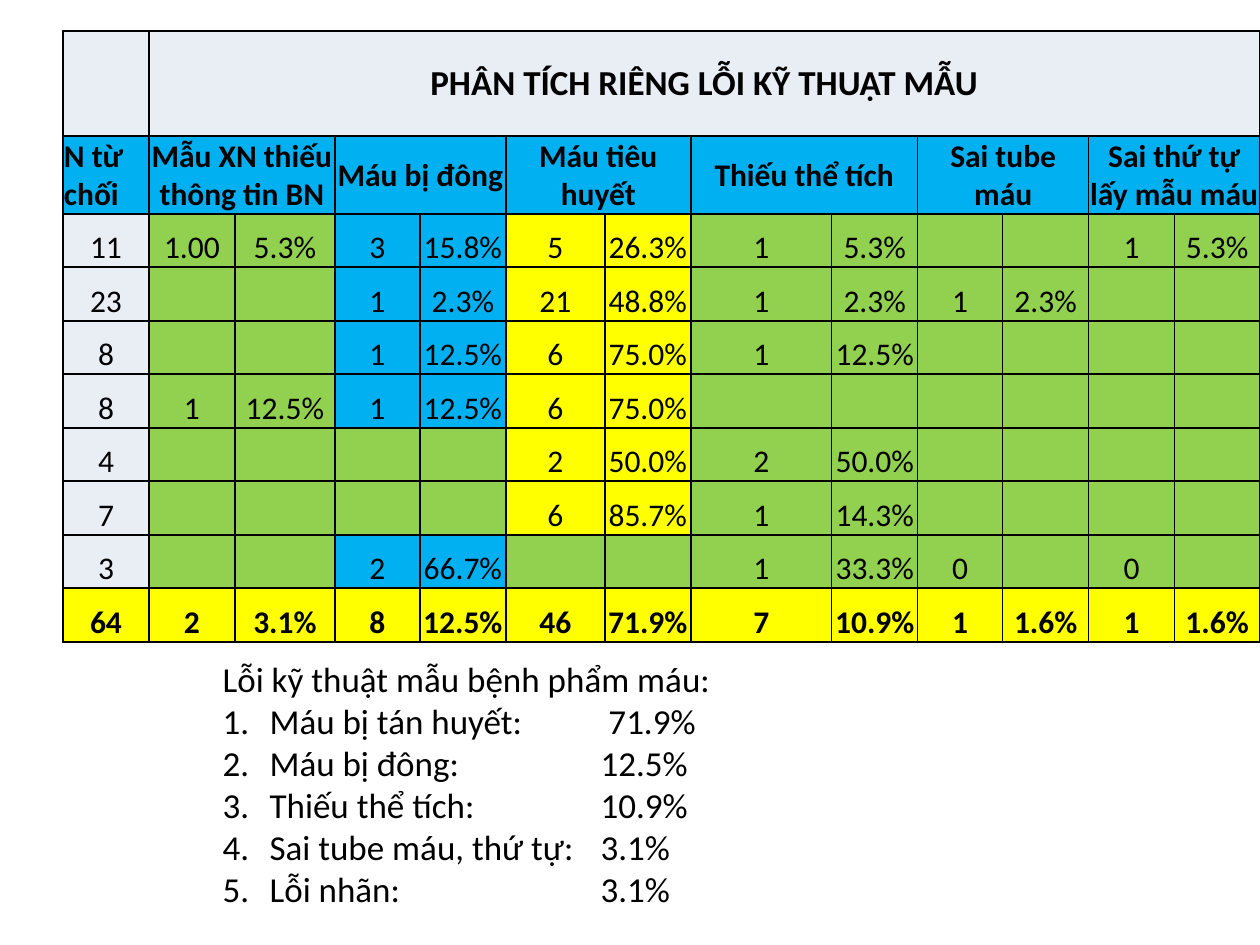
from dataclasses import dataclass

from lxml.etree import SubElement
from pptx import Presentation
from pptx.dml.color import RGBColor
from pptx.enum.text import MSO_ANCHOR, MSO_AUTO_SIZE, PP_ALIGN
from pptx.oxml.ns import qn
from pptx.util import Emu, Pt

EMU_PER_PX = 914400 // 126


@dataclass(frozen=True)
class Theme:
    font: str = "Calibri"
    text: str = "000000"
    border: str = "000000"
    pale: str = "E9EDF4"
    blue: str = "00B0F0"
    green: str = "92D050"
    yellow: str = "FFFF00"
    large: int = 20
    normal: int = 18
    border_width: int = 1


TITLE = "PHÂN TÍCH RIÊNG LỖI KỸ THUẬT MẪU"
REJECTED = "N từ chối"
ERROR_TYPES = [
    "Mẫu XN thiếu thông tin BN",
    "Máu bị đông",
    "Máu tiêu huyết",
    "Thiếu thể tích",
    "Sai tube máu",
    "Sai thứ tự lấy mẫu máu",
]
COUNTS = [
    ["11", "1.00", "5.3%", "3", "15.8%", "5", "26.3%", "1", "5.3%", "", "", "1", "5.3%"],
    ["23", "", "", "1", "2.3%", "21", "48.8%", "1", "2.3%", "1", "2.3%", "", ""],
    ["8", "", "", "1", "12.5%", "6", "75.0%", "1", "12.5%", "", "", "", ""],
    ["8", "1", "12.5%", "1", "12.5%", "6", "75.0%", "", "", "", "", "", ""],
    ["4", "", "", "", "", "2", "50.0%", "2", "50.0%", "", "", "", ""],
    ["7", "", "", "", "", "6", "85.7%", "1", "14.3%", "", "", "", ""],
    ["3", "", "", "2", "66.7%", "", "", "1", "33.3%", "0", "", "0", ""],
    ["64", "2", "3.1%", "8", "12.5%", "46", "71.9%", "7", "10.9%", "1", "1.6%", "1", "1.6%"],
]
COLUMN_WIDTHS = [86, 86, 100, 85, 86, 99, 86, 141, 86, 85, 86, 86, 85]
ROW_HEIGHTS = [105, 78] + [53, 54] * 4
SUMMARY_HEADING = "Lỗi kỹ thuật mẫu bệnh phẩm máu:"
SUMMARY = [
    "Máu bị tán huyết:\t 71.9%",
    "Máu bị đông:\t12.5%",
    "Thiếu thể tích:\t10.9%",
    "Sai tube máu, thứ tự:\t3.1%",
    "Lỗi nhãn:\t3.1%",
]


def px(length):
    return Emu(length * EMU_PER_PX)


def write(para, text, *, font, size, color, bold=False, align=PP_ALIGN.LEFT):
    para.alignment = align
    span = para.add_run()
    span.text = text
    span.font.name = font
    span.font.size = Pt(size)
    span.font.bold = bold
    span.font.color.rgb = RGBColor.from_string(color)


class SlideBuilder:
    def __init__(self, page, theme):
        self.page = page
        self.theme = theme

    def table(self, left, top, widths, heights):
        frame = self.page.shapes.add_table(
            len(heights), len(widths), px(left), px(top), px(sum(widths)), px(sum(heights)))
        table = frame.table
        table.first_row = table.horz_banding = False
        for column, width in zip(table.columns, widths):
            column.width = px(width)
        for row, height in zip(table.rows, heights):
            row.height = px(height)
        for cell in table.iter_cells():
            self.borders(cell)
        return table

    def borders(self, cell):
        properties = cell._tc.get_or_add_tcPr()
        for side in ("a:lnL", "a:lnR", "a:lnT", "a:lnB"):
            line = SubElement(properties, qn(side), w=str(Pt(self.theme.border_width)))
            fill = SubElement(line, qn("a:solidFill"))
            SubElement(fill, qn("a:srgbClr"), val=self.theme.border)

    def cell(self, cell, text, fill, *, size=None, bold=False,
             align=PP_ALIGN.CENTER, anchor=MSO_ANCHOR.BOTTOM):
        cell.margin_left = cell.margin_right = cell.margin_top = px(1)
        cell.margin_bottom = px(0)
        cell.vertical_anchor = anchor
        cell.fill.solid()
        cell.fill.fore_color.rgb = RGBColor.from_string(fill)
        if text:
            write(cell.text_frame.paragraphs[0], text, font=self.theme.font,
                  size=size or self.theme.normal, color=self.theme.text, bold=bold, align=align)

    def numbered_list(self, box, left, top, width, height, heading, items, *, indent, tab):
        box.left, box.top, box.width, box.height = map(px, (left, top, width, height))
        frame = box.text_frame
        frame.word_wrap = True
        frame.auto_size = MSO_AUTO_SIZE.SHAPE_TO_FIT_TEXT
        for index, text in enumerate([heading] + items):
            para = frame.add_paragraph() if index else frame.paragraphs[0]
            para.space_before = Pt(0)
            margin = px(indent if index else 0)
            properties = para._p.get_or_add_pPr()
            properties.set("marL", str(margin))
            properties.set("indent", str(-margin))
            if index:
                SubElement(properties, qn("a:buFont"), typeface="+mj-lt")
                SubElement(properties, qn("a:buAutoNum"), type="arabicPeriod")
                stops = SubElement(properties, qn("a:tabLst"))
                SubElement(stops, qn("a:tab"), pos=str(px(tab)), algn="l")
            else:
                SubElement(properties, qn("a:buNone"))
            write(para, text, font=self.theme.font, size=self.theme.large, color=self.theme.text)


def count_fill(theme, column, text):
    if column == 0:
        return theme.pale
    if text and column in (3, 4):
        return theme.blue
    if text and column in (5, 6):
        return theme.yellow
    return theme.green


def add_error_table(builder):
    theme = builder.theme
    table = builder.table(63, 31, COLUMN_WIDTHS, ROW_HEIGHTS)
    last_column = len(COLUMN_WIDTHS) - 1

    table.cell(0, 1).merge(table.cell(0, last_column))
    builder.cell(table.cell(0, 0), "", theme.pale)
    builder.cell(table.cell(0, 1), TITLE, theme.pale, size=theme.large, bold=True,
                 anchor=MSO_ANCHOR.MIDDLE)

    builder.cell(table.cell(1, 0), REJECTED, theme.blue, bold=True, align=PP_ALIGN.LEFT)
    for index, name in enumerate(ERROR_TYPES):
        column = 1 + 2 * index
        table.cell(1, column).merge(table.cell(1, column + 1))
        is_last = column + 1 == last_column
        builder.cell(table.cell(1, column), name, theme.blue, bold=True,
                     anchor=MSO_ANCHOR.BOTTOM if is_last else MSO_ANCHOR.MIDDLE)

    for row, values in enumerate(COUNTS, start=2):
        is_total = row == len(ROW_HEIGHTS) - 1
        for column, text in enumerate(values):
            fill = theme.yellow if is_total else count_fill(theme, column, text)
            builder.cell(table.cell(row, column), text, fill, bold=is_total)


def main():
    deck = Presentation()
    deck.slide_width, deck.slide_height = px(1260), px(945)
    page = deck.slides.add_slide(deck.slide_layouts[1])
    title = page.shapes.title
    title.element.getparent().remove(title.element)

    builder = SlideBuilder(page, Theme())
    add_error_table(builder)
    builder.numbered_list(page.placeholders[1], 210, 651, 714, 267,
                          SUMMARY_HEADING, SUMMARY, indent=47, tab=378)
    deck.save("out.pptx")


if __name__ == "__main__":
    main()
